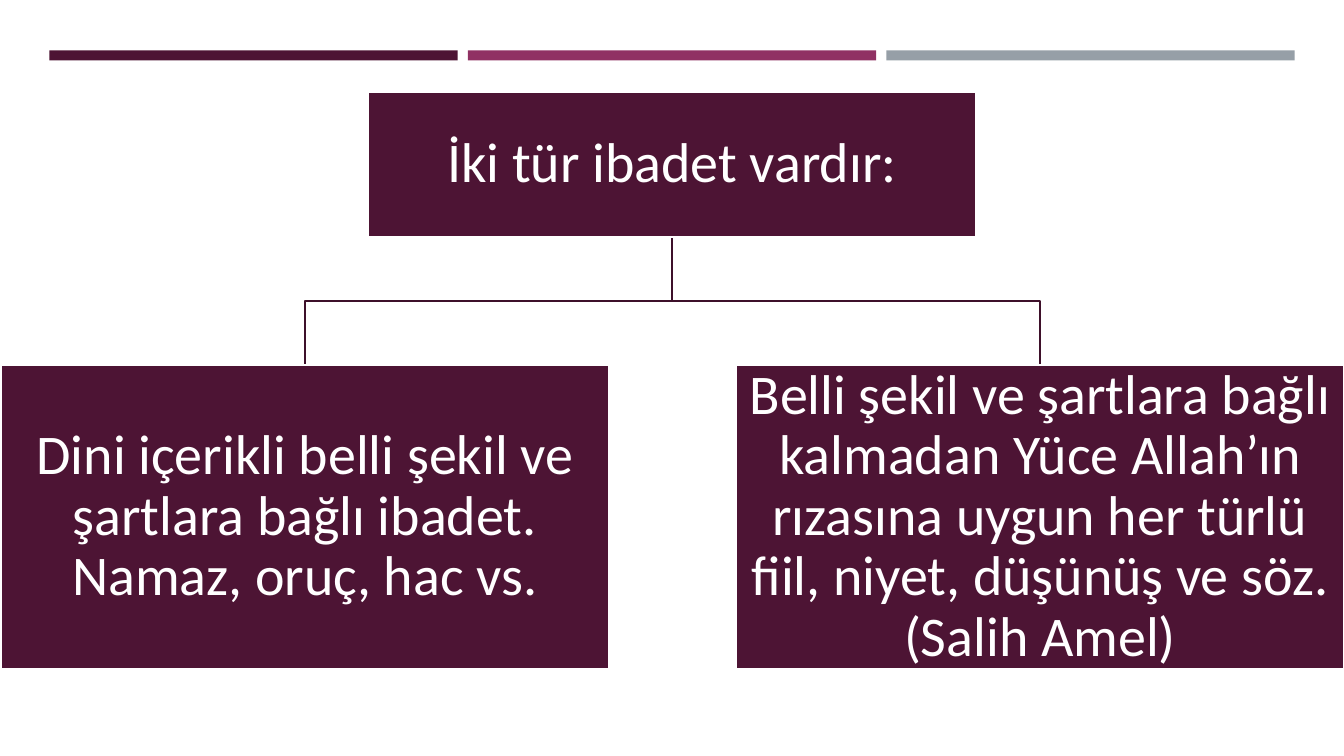
"""Build the slide on the two kinds of worship as a small hierarchy."""
import pptx
import pptx.util
import pptx.dml.color
import pptx.enum.shapes
import pptx.enum.text

Inches = pptx.util.Inches
Pt = pptx.util.Pt
COLORS = {
    "plum": "4D1434",
    "magenta": "903163",
    "gray": "969FA7",
    "branch": "3E102A",
    "white": "FFFFFF",
}


def rgb(name):
    return pptx.dml.color.RGBColor.from_string(COLORS[name])


def add_rect(s, left, top, width, height, color):
    sp = s.shapes.add_shape(
        pptx.enum.shapes.MSO_SHAPE.RECTANGLE,
        Inches(left), Inches(top), Inches(width), Inches(height))
    sp.shadow.inherit = False
    sp.fill.solid()
    sp.fill.fore_color.rgb = rgb(color)
    sp.line.fill.background()
    return sp


prs = pptx.Presentation()
prs.slide_width = Inches(13.33)
prs.slide_height = Inches(7.5)
s = prs.slides.add_slide(prs.slide_layouts[6])

for i, color in enumerate(["plum", "magenta", "gray"]):
    add_rect(s, 0.49 + i * 4.15, 0.5, 4.05, 0.1, color)

box_width = 6.03
root_left, root_top, root_height = 3.65, 0.91, 1.44
child_lefts, child_top, child_height = (0.01, 7.3), 3.62, 3.02
root_x = root_left + box_width / 2
root_bottom = root_top + root_height
branch_y = (root_bottom + child_top) / 2

for left in reversed(child_lefts):
    child_x = left + box_width / 2
    builder = s.shapes.build_freeform(Inches(root_x), Inches(root_bottom))
    builder.add_line_segments(
        [(Inches(x), Inches(y)) for x, y in
         [(root_x, branch_y), (child_x, branch_y), (child_x, child_top)]],
        close=False)
    sp = builder.convert_to_shape()
    sp.shadow.inherit = False
    sp.fill.background()
    sp.line.color.rgb = rgb("branch")
    sp.line.width = Pt(1.75)

boxes = [
    (root_left, root_top, root_height, "İki tür ibadet vardır:"),
    (child_lefts[0], child_top, child_height,
     "Dini içerikli belli şekil ve şartlara bağlı ibadet. Namaz, oruç, hac vs."),
    (child_lefts[1], child_top, child_height,
     "Belli şekil ve şartlara bağlı kalmadan Yüce Allah’ın rızasına uygun "
     "her türlü fiil, niyet, düşünüş ve söz. (Salih Amel)"),
]
for left, top, height, text in boxes:
    sp = add_rect(s, left, top, box_width, height, "plum")
    sp.line.color.rgb = rgb("white")
    sp.line.width = Pt(1.75)
    tf = sp.text_frame
    tf.word_wrap = True
    tf.vertical_anchor = pptx.enum.text.MSO_ANCHOR.MIDDLE
    tf.margin_left = tf.margin_right = Inches(0.03)
    tf.margin_top = tf.margin_bottom = Inches(0.03)
    p = tf.paragraphs[0]
    p.text = text
    p.alignment = pptx.enum.text.PP_ALIGN.CENTER
    p.line_spacing = 0.9
    p.font.name = "Calibri"
    p.font.size = Pt(40)
    p.font.color.rgb = rgb("white")

prs.save("out.pptx")
